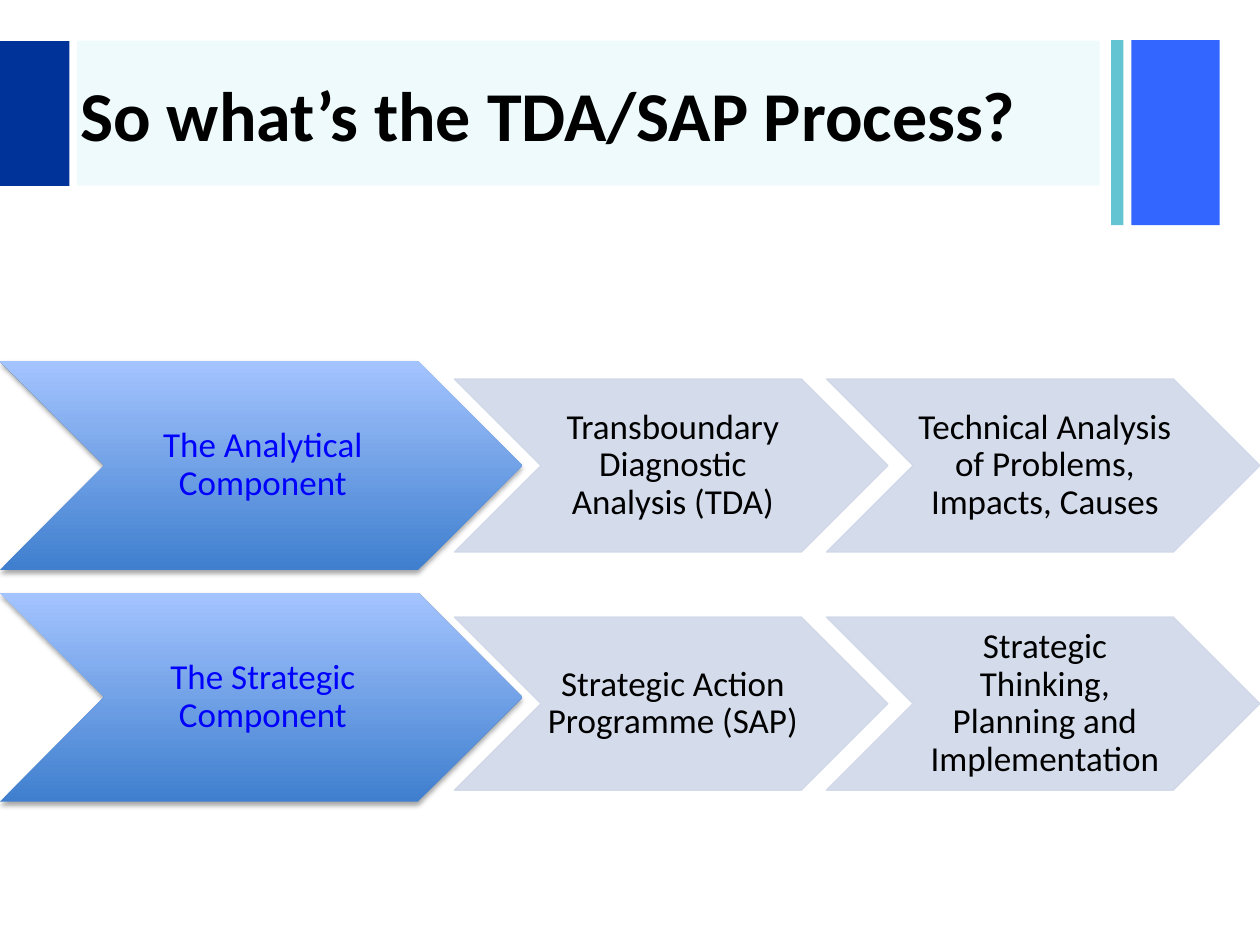
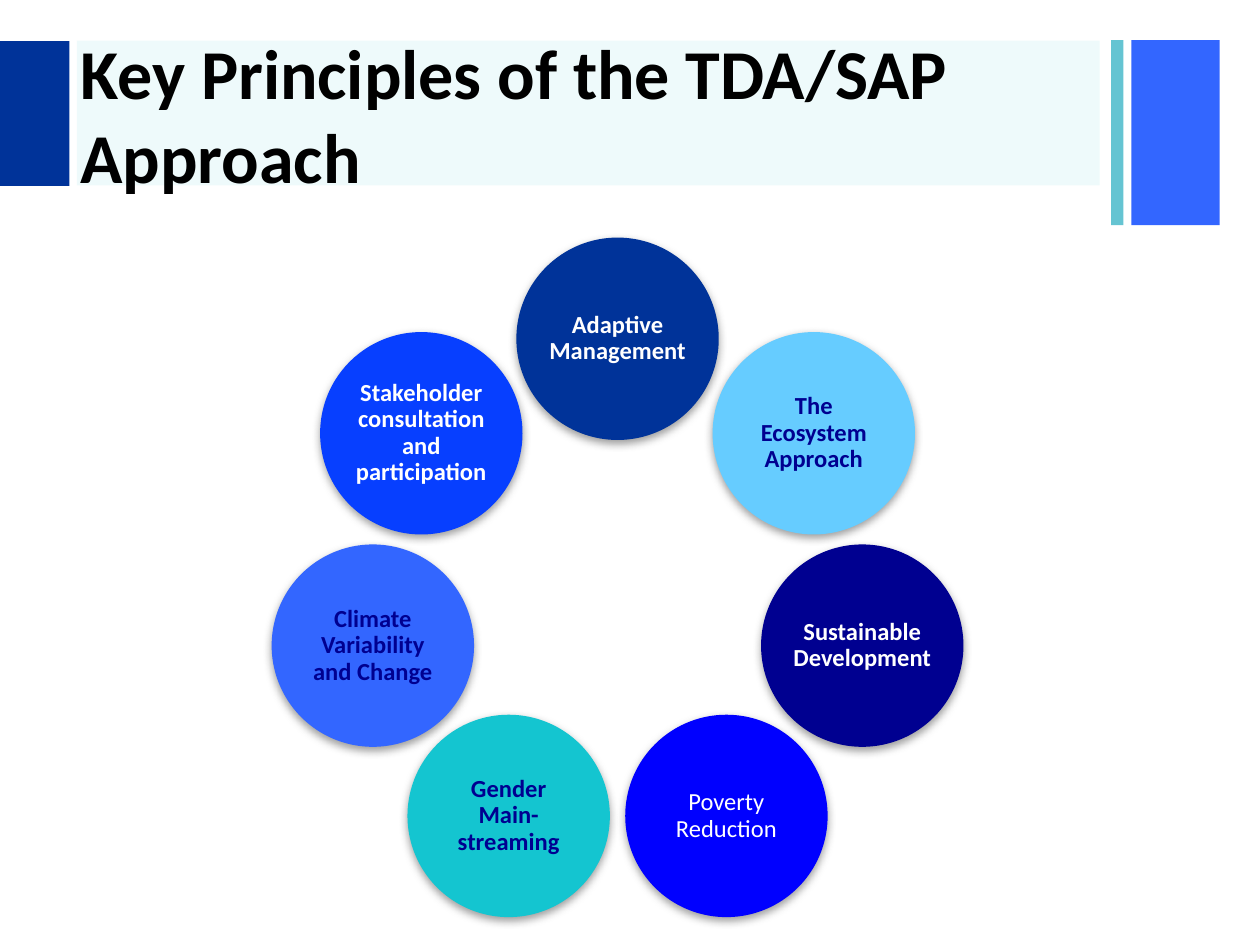
import math

import pptx
import pptx.util
import pptx.dml.color
import pptx.enum.shapes
import pptx.enum.text
import pptx.oxml
import pptx.oxml.ns

Cm = pptx.util.Cm
Pt = pptx.util.Pt
PRESET = pptx.enum.shapes.MSO_SHAPE

FONT = "Calibri"
BLACK, WHITE = "000000", "FFFFFF"
NAVY, DEEP_NAVY, BLUE, ROYAL, TEAL = "003399", "000090", "0000FF", "3366FF", "14C5D0"
PALE = "D0D8E8"

TITLE_BOX = (1.37, 0.86, 21.0, 2.84)
# Header bands: left, top, width, height, colour, opacity in percent
BANDS = [
    (22.81, 0.81, 1.78, 3.73, ROYAL, 100),
    (22.4, 0.81, 0.25, 3.73, "65C4D2", 100),
    (1.55, 0.82, 20.62, 2.92, TEAL, 7),
    (0, 0.83, 1.4, 2.92, NAVY, 100),
]

# Process rows: top of lead chevron, top of the others, lead text, other texts
PROCESS_ROWS = [
    (7.28, 7.64, "The Analytical Component",
     ["Transboundary Diagnostic Analysis (TDA)",
      "Technical Analysis of Problems, Impacts, Causes"]),
    (11.95, 12.44, "The Strategic Component",
     ["Strategic Action Programme (SAP)",
      "Strategic Thinking, Planning and Implementation"]),
]

# Principles, clockwise from the top: text, fill, text colour, bold
PRINCIPLES = [
    ("Adaptive Management", NAVY, WHITE, True),
    ("The Ecosystem Approach", "66CCFF", DEEP_NAVY, True),
    ("Sustainable Development", DEEP_NAVY, WHITE, True),
    ("Poverty Reduction", BLUE, WHITE, False),
    ("Gender Main-streaming", TEAL, DEEP_NAVY, True),
    ("Climate Variability and Change", ROYAL, DEEP_NAVY, True),
    ("Stakeholder consultation and participation", "073FFF", WHITE, True),
]


def paint(color_format, hex_color, opacity=100):
    """Set a colour, with opacity in percent."""
    color_format.rgb = pptx.dml.color.RGBColor.from_string(hex_color)
    if opacity < 100:
        for srgb in color_format._xFill.iter(pptx.oxml.ns.qn("a:srgbClr")):
            alpha = pptx.oxml.parse_xml(
                f'<a:alpha {pptx.oxml.ns.nsdecls("a")} val="{opacity * 1000}"/>')
            srgb.append(alpha)


def add_outline(slide, preset, box, fill=None, opacity=100):
    """Add a preset shape without line or shadow; box is in cm."""
    shape = slide.shapes.add_shape(preset, *[Cm(length) for length in box])
    shape.shadow.inherit = False
    shape.line.fill.background()
    if fill:
        shape.fill.solid()
        paint(shape.fill.fore_color, fill, opacity)
    return shape


def drop_shadow(shape, color, opacity, blur, distance):
    """Give a shape a shadow straight below it; blur and distance in points."""
    shadow = pptx.oxml.parse_xml(
        f'<a:outerShdw {pptx.oxml.ns.nsdecls("a")} blurRad="{Pt(blur)}" '
        f'dist="{Pt(distance)}" dir="5400000" rotWithShape="0">'
        f'<a:srgbClr val="{color}"><a:alpha val="{opacity * 1000}"/></a:srgbClr>'
        '</a:outerShdw>')
    shape._element.spPr.find(pptx.oxml.ns.qn("a:effectLst")).append(shadow)


def write(shape, text, size, color, bold=False, insets=None,
          align=pptx.enum.text.PP_ALIGN.CENTER, spacing=0.9):
    frame = shape.text_frame
    frame.text = text
    frame.word_wrap = True
    frame.auto_size = pptx.enum.text.MSO_AUTO_SIZE.NONE
    frame.vertical_anchor = pptx.enum.text.MSO_ANCHOR.MIDDLE
    if insets:
        (frame.margin_left, frame.margin_top,
         frame.margin_right, frame.margin_bottom) = [Cm(inset) for inset in insets]
    paragraph = frame.paragraphs[0]
    paragraph.alignment = align
    paragraph.line_spacing = spacing
    paragraph.font.name = FONT
    paragraph.font.size = Pt(size)
    paragraph.font.bold = bold
    paint(paragraph.font.color, color)


def add_titled_slide(deck, title):
    """Add a slide with the shared header bands behind its title."""
    slide = deck.slides.add_slide(deck.slide_layouts[5])
    for *box, color, opacity in BANDS:
        add_outline(slide, PRESET.RECTANGLE, box, color, opacity)
    heading = slide.shapes.title
    heading.left, heading.top, heading.width, heading.height = [
        Cm(length) for length in TITLE_BOX]
    write(heading, title, 40, BLACK, bold=True,
          align=pptx.enum.text.PP_ALIGN.LEFT, spacing=1.0)
    slide.shapes._spTree.append(heading._element)
    return slide


def add_process_row(slide, lead_top, step_top, lead_text, step_texts):
    """A large gradient chevron followed by pale, overlapping chevrons."""
    insets = (0.07, 0.03, 0, 0.03)
    lead = add_outline(slide, PRESET.CHEVRON, (0, lead_top, 10.53, 4.21))
    lead.fill.gradient()
    lead.fill.gradient_angle = 90
    for stop, color in zip(lead.fill.gradient_stops, ("3F7FCE", "A4C4FF")):
        paint(stop.color, color)
    drop_shadow(lead, BLACK, 35, 3.1, 1.8)
    write(lead, lead_text, 20, BLUE, insets=insets)

    first_left, pitch = 9.16, 7.5
    for index, text in enumerate(step_texts):
        box = (first_left + index * pitch, step_top, 8.74, 3.49)
        step = add_outline(slide, PRESET.CHEVRON, box, PALE, 90)
        step.line.width = Pt(0.75)
        step.line.fill.solid()
        paint(step.line.fill.fore_color, PALE, 90)
        write(step, text, 20, BLACK, insets=insets)


def add_principle_ring(slide, center_x, center_y, radius, diameter):
    """Circles spaced evenly around a ring, starting at the top."""
    for index, (text, fill, color, bold) in enumerate(PRINCIPLES):
        angle = 2 * math.pi * index / len(PRINCIPLES)
        left = center_x + radius * math.sin(angle) - diameter / 2
        top = center_y - radius * math.cos(angle) - diameter / 2
        circle = add_outline(slide, PRESET.OVAL, (left, top, diameter, diameter), fill)
        drop_shadow(circle, "808080", 75, 5, 2)
        write(circle, text, 14, color, bold, insets=(0.05,) * 4)


def main():
    deck = pptx.Presentation()
    deck.slide_width, deck.slide_height = Cm(25.4), Cm(19.05)

    process = add_titled_slide(deck, "So what’s the TDA/SAP Process?")
    for row in PROCESS_ROWS:
        add_process_row(process, *row)

    principles = add_titled_slide(deck, "Key Principles of the TDA/SAP Approach")
    add_principle_ring(principles, 12.45, 11.89, 5.06, 4.08)

    deck.save("out.pptx")


if __name__ == "__main__":
    main()
